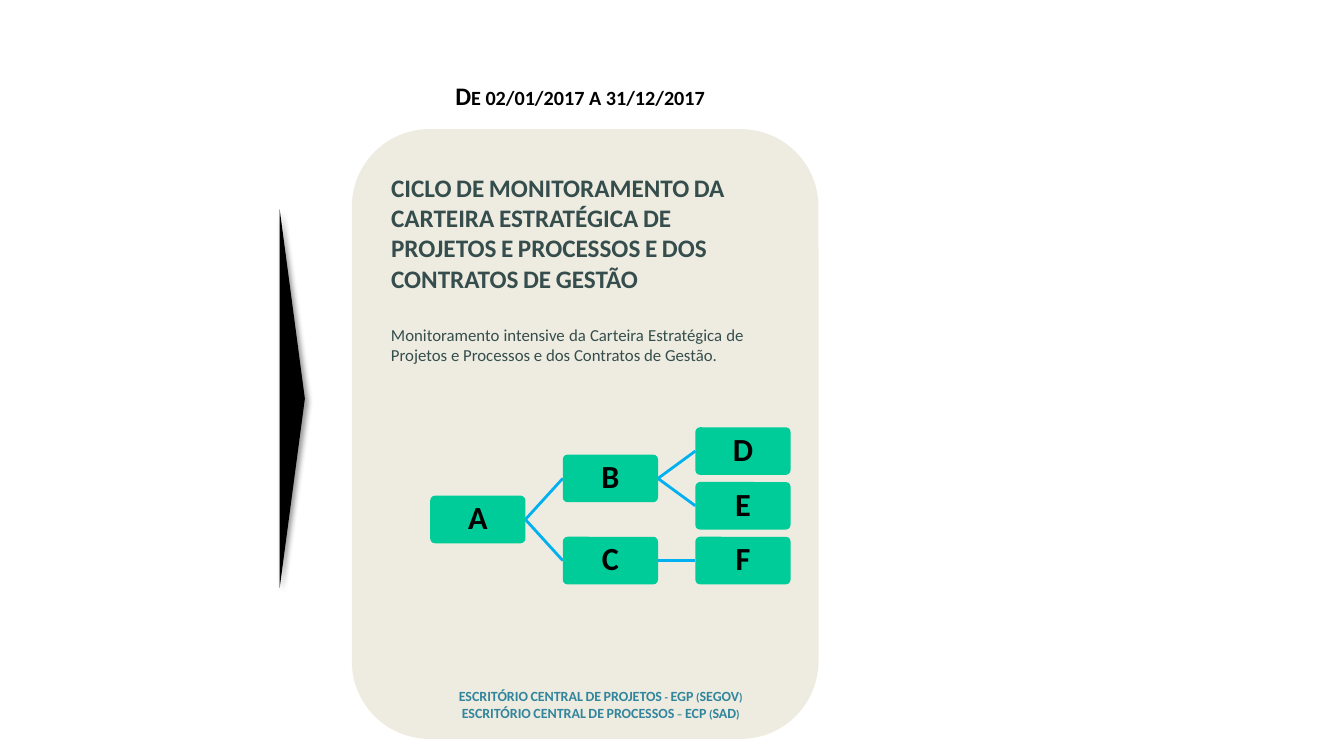
from lxml.etree import SubElement
from pptx import Presentation
from pptx.dml.color import RGBColor
from pptx.enum.shapes import MSO_CONNECTOR, MSO_SHAPE
from pptx.enum.text import MSO_ANCHOR, PP_ALIGN
from pptx.oxml import parse_xml
from pptx.oxml.ns import nsdecls, qn
from pptx.util import Pt


def color(value):
    return RGBColor.from_string(value)


def write(box, *lines, size, ink, bold=True, caps=False, align=PP_ALIGN.LEFT, wrap=True):
    frame = box.text_frame
    frame.word_wrap = wrap
    for index, line in enumerate(lines):
        para = frame.paragraphs[0] if index == 0 else frame.add_paragraph()
        para.alignment = align
        span = para.add_run()
        span.text = line
        span.font.name = "Calibri"
        span.font.size = Pt(size)
        span.font.bold = bold
        span.font.color.rgb = color(ink)
        if caps:
            span.font._element.set("cap", "small")


deck = Presentation()
deck.slide_width = Pt(960)
deck.slide_height = Pt(540)
page = deck.slides.add_slide(deck.slide_layouts[6])
shapes = page.shapes

panel = shapes.add_shape(MSO_SHAPE.ROUNDED_RECTANGLE, Pt(251.3), Pt(92.2), Pt(333.4), Pt(435.6))
panel.shadow.inherit = False
panel.fill.solid()
panel.fill.fore_color.rgb = color("EEECE1")
panel.line.fill.background()

summary = shapes.add_textbox(Pt(272.2), Pt(228.2), Pt(266.4), Pt(58.3))
write(summary, "Monitoramento intensive da Carteira Estratégica de Projetos e Processos e dos Contratos de Gestão.",
      size=12, ink="354D4C", bold=False, align=PP_ALIGN.JUSTIFY)

title = shapes.add_textbox(Pt(272.2), Pt(119.5), Pt(282.2), Pt(100))
write(title, "CICLO DE MONITORAMENTO DA CARTEIRA ESTRATÉGICA DE PROJETOS E PROCESSOS E DOS CONTRATOS DE GESTÃO",
      size=18, ink="354D4C", caps=True)

offices = shapes.add_textbox(Pt(281.5), Pt(487.4), Pt(295.2), Pt(36))
write(offices, "ESCRITÓRIO CENTRAL DE PROJETOS - EGP (SEGOV)", "ESCRITÓRIO CENTRAL DE PROCESSOS – ECP (SAD)",
      size=10, ink="31859C", caps=True, align=PP_ALIGN.CENTER)

period = shapes.add_textbox(Pt(280.1), Pt(54), Pt(268.6), Pt(33.8))
write(period, "De 02/01/2017 a 31/12/2017", size=18, ink="000000", caps=True,
      align=PP_ALIGN.CENTER, wrap=False)

node_width, node_height = 68, 34
column_step, row_step = 94.7, 39.1
positions = {"A": (0, 1.25), "B": (1, 0.5), "C": (1, 2), "D": (2, 0), "E": (2, 1), "F": (2, 2)}
corners = {name: (307.3 + column * column_step, 305.2 + row * row_step)
           for name, (column, row) in positions.items()}

for start, end in ("AB", "AC", "BD", "BE", "CF"):
    left, top = corners[start]
    right, bottom = corners[end]
    link = shapes.add_connector(MSO_CONNECTOR.STRAIGHT, Pt(left + node_width), Pt(top + node_height / 2),
                                Pt(right), Pt(bottom + node_height / 2))
    link.line.color.rgb = color("00B0F0")
    link.line.width = Pt(2)
    SubElement(link._element.spPr, qn("a:effectLst"))

for name, (left, top) in corners.items():
    node = shapes.add_shape(MSO_SHAPE.ROUNDED_RECTANGLE, Pt(left), Pt(top), Pt(node_width), Pt(node_height))
    node.adjustments[0] = 0.1
    node.shadow.inherit = False
    node.fill.solid()
    node.fill.fore_color.rgb = color("00CC99")
    node.line.fill.background()
    frame = node.text_frame
    frame.margin_left = frame.margin_right = frame.margin_top = frame.margin_bottom = Pt(1.5)
    frame.vertical_anchor = MSO_ANCHOR.MIDDLE
    write(node, name, size=23, ink="000000", align=PP_ALIGN.CENTER)
    frame.paragraphs[0].line_spacing = 0.9

pointer = shapes.add_shape(MSO_SHAPE.ISOSCELES_TRIANGLE, Pt(73.4), Pt(275.8), Pt(270.7), Pt(18))
pointer.rotation = 90
pointer.fill.solid()
pointer.fill.fore_color.rgb = color("000000")
pointer.line.fill.background()
pointer._element.spPr.append(parse_xml(
    f'<a:effectLst {nsdecls("a")}>'
    f'<a:outerShdw blurRad="{Pt(4)}" dist="{Pt(3)}" dir="2700000" algn="tl" rotWithShape="0">'
    '<a:srgbClr val="000000"><a:alpha val="40000"/></a:srgbClr>'
    '</a:outerShdw></a:effectLst>'))

deck.save("out.pptx")
